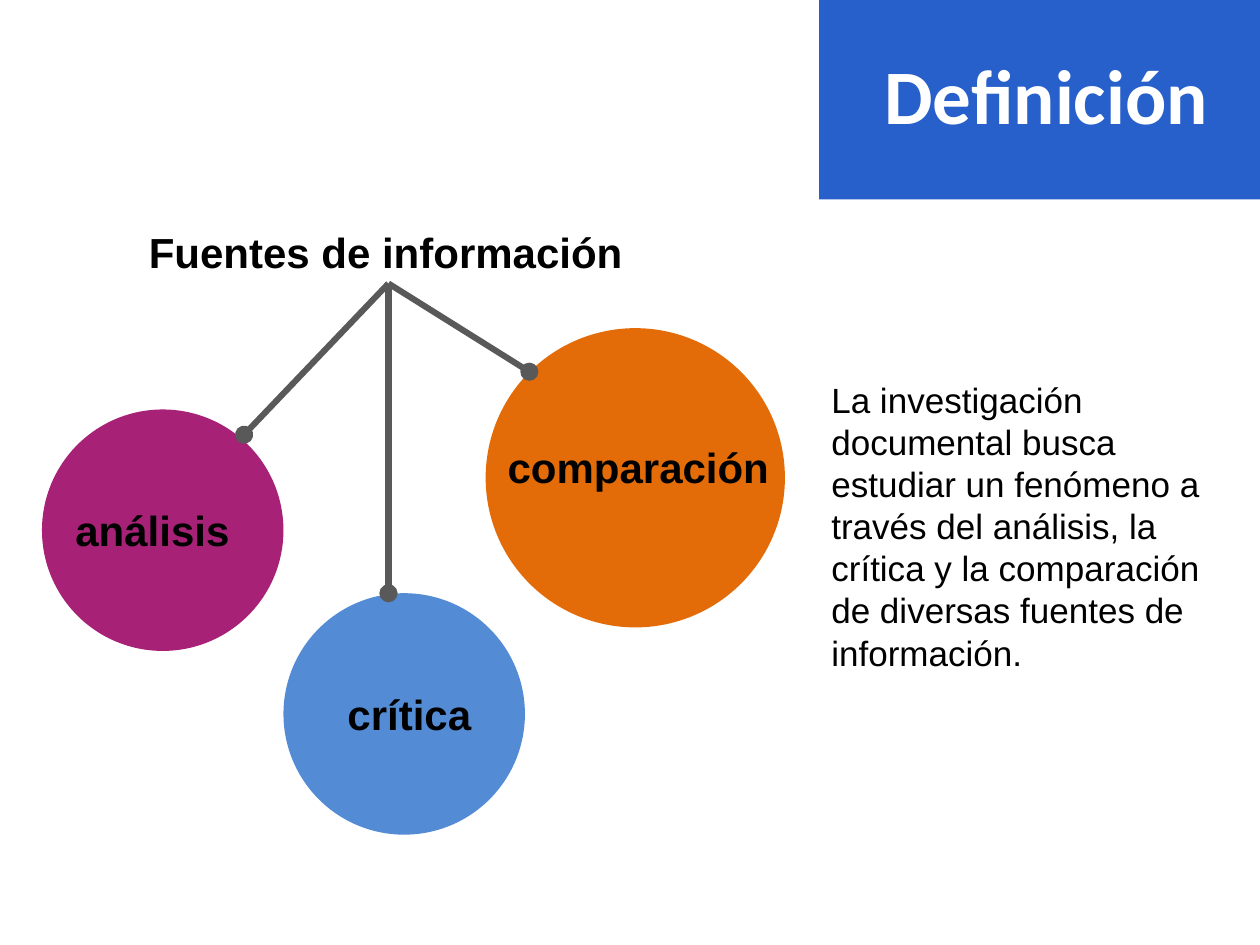
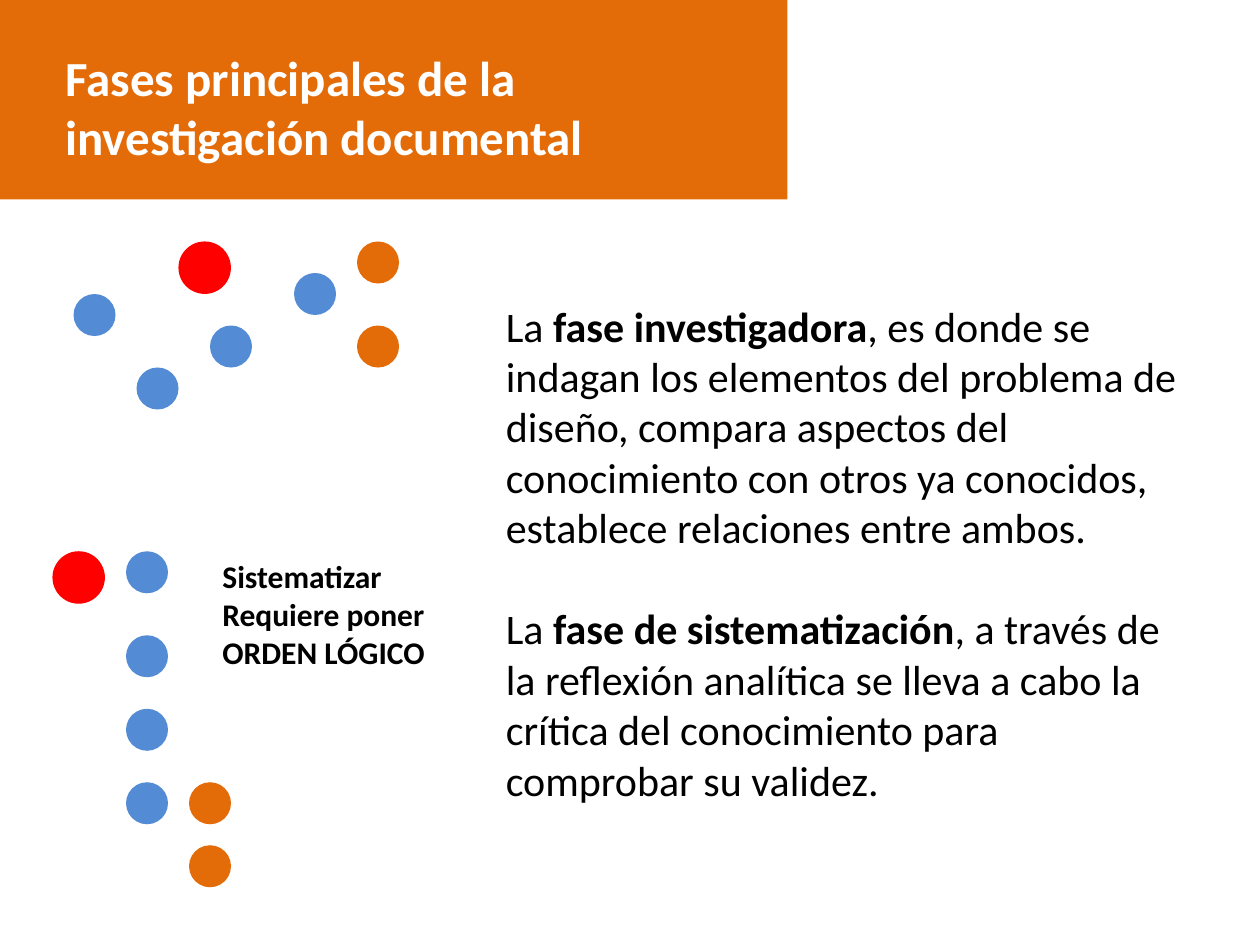
from lxml.etree import SubElement
from pptx import Presentation
from pptx.dml.color import RGBColor
from pptx.enum.shapes import MSO_CONNECTOR, MSO_SHAPE
from pptx.enum.text import MSO_ANCHOR, MSO_AUTO_SIZE, PP_ALIGN
from pptx.oxml.ns import qn
from pptx.util import Pt

COLORS = {
    "white": "FFFFFF", "black": "000000", "royal": "2760CB", "blue": "538CD5",
    "orange": "E36C09", "purple": "A72277", "red": "FF0000", "gray": "595959",
}


class Deck:
    """Hold the shared style and the current slide, and add elements to it."""

    def __init__(self):
        self.prs = Presentation()
        self.prs.slide_width, self.prs.slide_height = Pt(720), Pt(540)
        self.s = None

    def color(self, name):
        return RGBColor.from_string(COLORS[name])

    def format_run(self, r, size, font, color="black", bold=False):
        r.font.size, r.font.name, r.font.bold = Pt(size), font, bold
        r.font.color.rgb = self.color(color)

    def slide(self, title, left, width, band, size):
        self.s = self.prs.slides.add_slide(self.prs.slide_layouts[5])
        sp = self.s.shapes.title
        sp.left, sp.top, sp.width, sp.height = Pt(left), Pt(0), Pt(width), Pt(114)
        sp.fill.solid()
        sp.fill.fore_color.rgb = self.color(band)
        tf = sp.text_frame
        tf.text = title
        tf.word_wrap, tf.auto_size = True, MSO_AUTO_SIZE.NONE
        tf.vertical_anchor = MSO_ANCHOR.TOP
        tf.margin_left, tf.margin_top, tf.margin_right = Pt(37.4), Pt(27.4), Pt(18)
        p = tf.paragraphs[0]
        p.alignment = PP_ALIGN.LEFT
        self.format_run(p.runs[0], size, "Calibri", "white", True)

    def text(self, left, top, width, height, paragraphs, size, font, gap=0):
        tf = self.s.shapes.add_textbox(Pt(left), Pt(top), Pt(width), Pt(height)).text_frame
        tf.word_wrap = True
        for i, parts in enumerate(paragraphs):
            p = tf.add_paragraph() if i else tf.paragraphs[0]
            p.space_before = Pt(gap if i else 0)
            for words, bold in parts:
                r = p.add_run()
                r.text = words
                self.format_run(r, size, font, bold=bold)

    def label(self, left, top, width, words):
        self.text(left, top, width, 36, [[(words, True)]], 24, "Arial")

    def circle(self, left, top, size, color):
        sp = self.s.shapes.add_shape(MSO_SHAPE.OVAL, Pt(left), Pt(top), Pt(size), Pt(size))
        sp.shadow.inherit = False
        sp.fill.solid()
        sp.fill.fore_color.rgb = self.color(color)
        sp.line.fill.background()

    def pointer(self, start, end):
        cxn = self.s.shapes.add_connector(MSO_CONNECTOR.STRAIGHT, *map(Pt, start + end))
        cxn.line.width = Pt(3.5)
        cxn.line.color.rgb = self.color("gray")
        spPr = cxn._element.spPr
        SubElement(spPr.find(qn("a:ln")), qn("a:tailEnd"), type="oval")
        SubElement(spPr, qn("a:effectLst"))


def definition(deck):
    """Build the slide that defines documentary research."""
    deck.slide("Definición", 468, 252, "royal", 44)
    deck.text(468, 213, 252, 177, [[(
        "La investigación documental busca estudiar un fenómeno a través del análisis, "
        "la crítica y la comparación de diversas fuentes de información.", False)]], 20, "Arial")
    deck.label(78, 126, 288, "Fuentes de información")
    for left, top, size, color in [
        (24, 234, 138, "purple"), (162, 339, 138, "blue"), (277.5, 187.5, 171, "orange"),
    ]:
        deck.circle(left, top, size, color)
    for left, top, width, words in [
        (36, 284.5, 104, "análisis"), (191.5, 390, 86, "crítica"), (283, 248.5, 166, "comparación"),
    ]:
        deck.label(left, top, width, words)
    for end in [(139.5, 248.4), (222, 339), (302.5, 212.4)]:
        deck.pointer((222, 162), end)


def phases(deck):
    """Build the slide on the two phases, with scattered and ordered dots."""
    deck.slide("Fases principales de la investigación documental", 0, 450, "orange", 28)
    deck.text(282, 168, 402, 327, [
        [("La ", False), ("fase investigadora", True),
         (", es donde se indagan los elementos del problema de diseño, compara aspectos "
          "del conocimiento con otros ya conocidos, establece relaciones entre ambos.", False)],
        [("La ", False), ("fase de sistematización", True),
         (", a través de la reflexión analítica se lleva a cabo la crítica del "
          "conocimiento para comprobar su validez.", False)],
    ], 24, "Calibri", gap=29)
    scattered = {
        "red": [(102, 138)],
        "blue": [(42, 168), (78, 210), (120, 186), (168, 156)],
        "orange": [(204, 138), (204, 186)],
    }
    ordered = {
        "red": [(30, 315)],
        "blue": [(72, top) for top in (315, 363, 405, 447)],
        "orange": [(108, top) for top in (447, 483)],
    }
    for group in (scattered, ordered):
        for color, places in group.items():
            for left, top in places:
                deck.circle(left, top, 30 if color == "red" else 24, color)
    lines = ["Sistematizar", "Requiere poner", "ORDEN LÓGICO"]
    deck.text(120, 315, 132, 73, [[(line, True)] for line in lines], 18, "Calibri")


def main():
    """Build both slides and save the deck."""
    deck = Deck()
    definition(deck)
    phases(deck)
    deck.prs.save("out.pptx")


if __name__ == "__main__":
    main()
